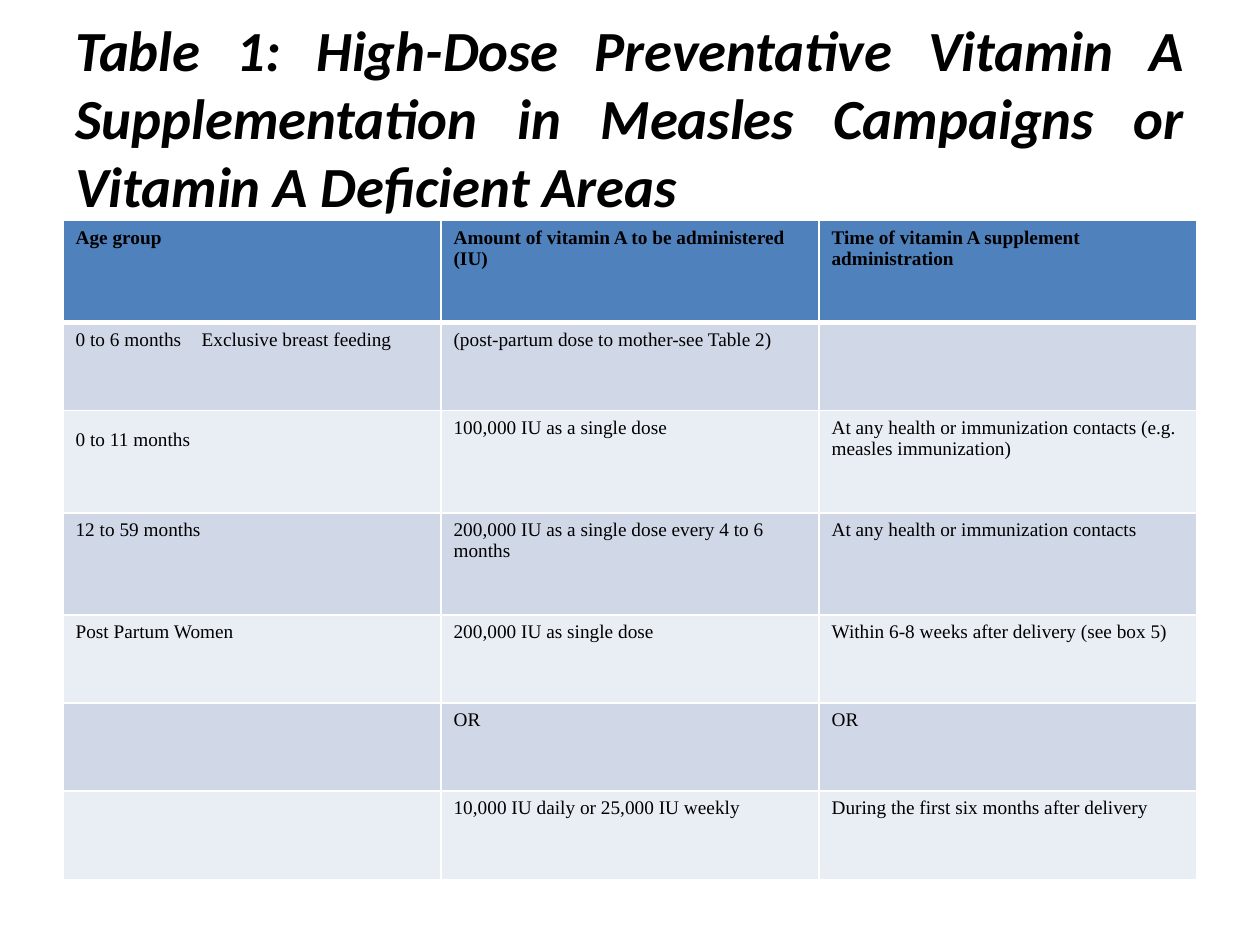
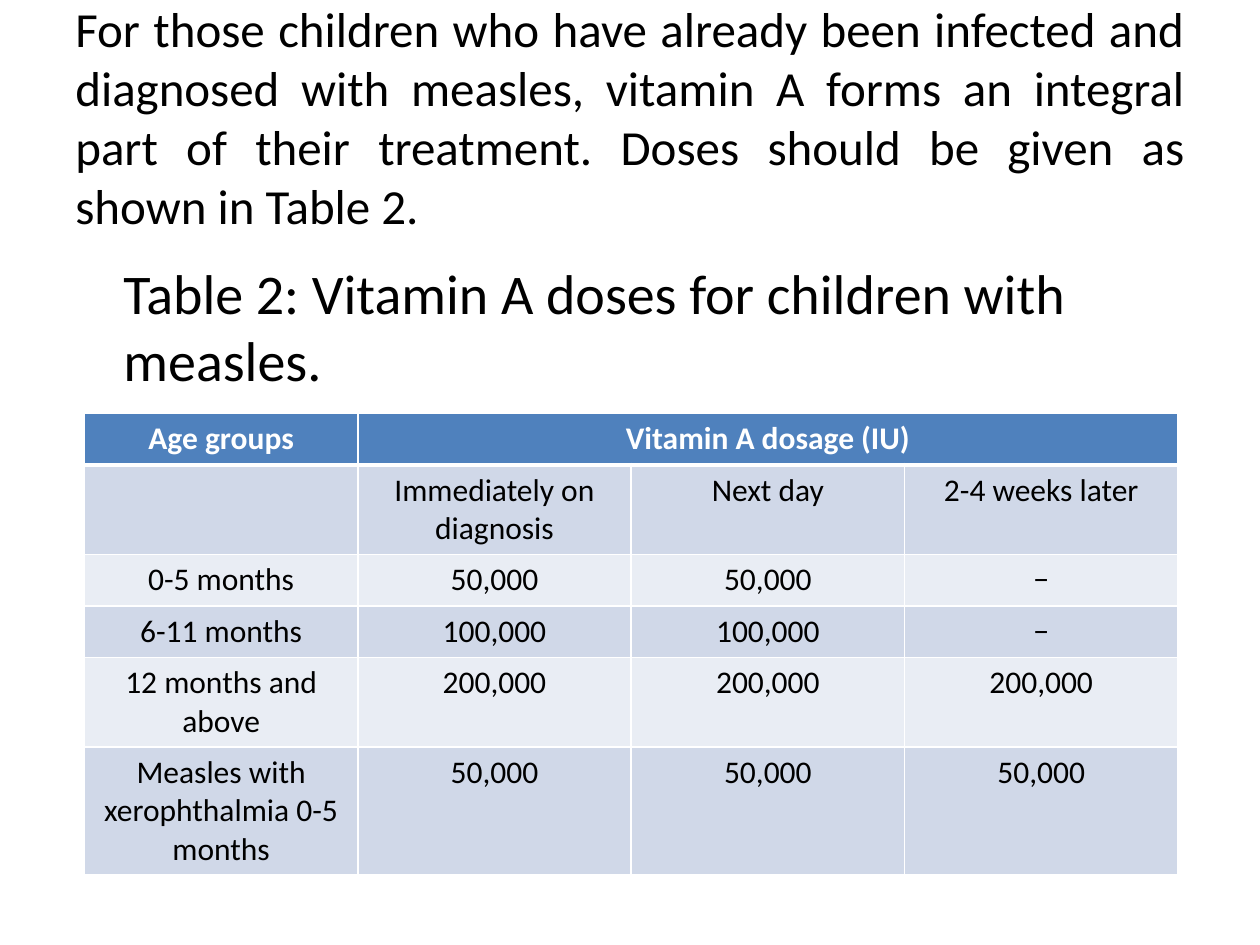
from dataclasses import dataclass

from lxml import etree
from pptx import Presentation
from pptx.dml.color import RGBColor
from pptx.enum.text import MSO_ANCHOR, PP_ALIGN
from pptx.oxml.ns import qn
from pptx.slide import Slide
from pptx.table import Table, _Cell
from pptx.text.text import _Paragraph
from pptx.util import Emu, Pt

LEFT, CENTER, JUSTIFY = PP_ALIGN.LEFT, PP_ALIGN.CENTER, PP_ALIGN.JUSTIFY
TOP, MIDDLE = MSO_ANCHOR.TOP, MSO_ANCHOR.MIDDLE

PX = 9144  # 100 px to the inch
BLACK, WHITE = "000000", "FFFFFF"
HEAD = "4F81BD"
BANDS = ("E9EDF4", "D0D8E8")
SANS, SERIF = "Calibri", "Times New Roman"
THIN, THICK = 1, 3


@dataclass
class Box:
    left: int
    top: int
    width: int
    height: int


@dataclass
class Style:
    size: float
    face: str = SANS
    color: str = BLACK
    bold: bool = False
    italic: bool = False
    align: PP_ALIGN = LEFT


@dataclass
class Grid:
    left: int
    top: int
    width: int
    rows: list[int]
    cells: list[list[str]]
    head: Style
    body: Style


TITLE = Box(50, 30, 900, 125)

DOSES = Grid(
    50, 175, 300, [81, 70, 81, 81, 70, 70, 70],
    [
        ["Age group", "Amount of vitamin A to be administered (IU)",
         "Time of vitamin A supplement administration"],
        ["0 to 6 months \tExclusive breast feeding",
         "(post-partum dose to mother-see Table 2)", ""],
        ["0 to 11 months", "100,000 IU as a single dose",
         "At any health or immunization contacts (e.g. measles immunization)"],
        ["12 to 59 months", "200,000 IU as a single dose every 4 to 6 months",
         "At any health or immunization contacts"],
        ["Post Partum Women", "200,000 IU as single dose",
         "Within 6-8 weeks after delivery (see box 5)"],
        ["", "OR", "OR"],
        ["", "10,000 IU daily or 25,000 IU weekly",
         "During the first six months after delivery"],
    ],
    Style(11, SERIF, bold=True), Style(11, SERIF),
)

CARE = Grid(
    67, 328, 217, [41, 71, 41, 41, 71, 101],
    [
        ["Age groups", "Vitamin A dosage (IU)", "", ""],
        ["", "Immediately on diagnosis", "Next day", "2-4 weeks later"],
        ["0-5 months", "50,000", "50,000", "−"],
        ["6-11 months", "100,000", "100,000", "−"],
        ["12 months and above", "200,000", "200,000", "200,000"],
        ["Measles with xerophthalmia 0-5 months", "50,000", "50,000", "50,000"],
    ],
    Style(18, color=WHITE, bold=True, align=CENTER), Style(18, align=CENTER),
)


def px(count: int) -> Emu:
    return Emu(count * PX)


def rgb(code: str) -> RGBColor:
    return RGBColor.from_string(code)


def write(para: _Paragraph, text: str, style: Style) -> None:
    para.text = text
    para.alignment = style.align
    font = para.font
    font.name, font.size = style.face, Pt(style.size)
    font.bold, font.italic = style.bold, style.italic
    font.color.rgb = rgb(style.color)


def add_text(slide: Slide, box: Box, text: str, style: Style,
             anchor: MSO_ANCHOR = MIDDLE, indent: int = 0) -> None:
    shape = slide.shapes.add_textbox(
        px(box.left), px(box.top), px(box.width), px(box.height))
    frame = shape.text_frame
    frame.word_wrap = True
    frame.vertical_anchor = anchor
    frame.margin_left = px(10 + indent)
    write(frame.paragraphs[0], text, style)


def add_edges(cell: _Cell, top: int, bottom: int) -> None:
    """Rule the four sides of a cell in white, with widths in points."""
    props = cell._tc.get_or_add_tcPr()
    for side, width in zip("LRTB", (THIN, THIN, top, bottom)):
        line = etree.SubElement(props, qn(f"a:ln{side}"), w=str(Pt(width)))
        fill = etree.SubElement(line, qn("a:solidFill"))
        etree.SubElement(fill, qn("a:srgbClr"), val=WHITE)


def add_grid(slide: Slide, grid: Grid) -> Table:
    count = len(grid.cells[0])
    table = slide.shapes.add_table(
        len(grid.rows), count, px(grid.left), px(grid.top),
        px(grid.width * count), px(sum(grid.rows))).table
    for col in table.columns:
        col.width = px(grid.width)
    for i, (high, texts) in enumerate(zip(grid.rows, grid.cells)):
        table.rows[i].height = px(high)
        for j, text in enumerate(texts):
            cell = table.cell(i, j)
            add_edges(cell, THICK if i == 1 else THIN, THIN if i else THICK)
            cell.fill.solid()
            cell.fill.fore_color.rgb = rgb(BANDS[i % 2] if i else HEAD)
            if text:
                write(cell.text_frame.paragraphs[0], text,
                      grid.body if i else grid.head)
    return table


def main() -> None:
    deck = Presentation()
    deck.slide_width, deck.slide_height = px(1000), px(750)
    blank = deck.slide_layouts[6]

    first = deck.slides.add_slide(blank)
    add_text(first, TITLE,
             "Table 1: High-Dose Preventative Vitamin A Supplementation in "
             "Measles Campaigns or Vitamin A Deficient Areas",
             Style(32.4, bold=True, italic=True, align=JUSTIFY))
    doses = add_grid(first, DOSES)
    doses.cell(2, 0).margin_top = px(15)

    second = deck.slides.add_slide(blank)
    add_text(second, TITLE,
             "For those children who have already been infected and diagnosed "
             "with measles, vitamin A forms an integral part of their "
             "treatment. Doses should be given as shown in Table 2.",
             Style(28, align=JUSTIFY))
    add_text(second, Box(50, 200, 900, 470),
             "Table 2: Vitamin A doses for children with measles.",
             Style(32), TOP, 38)
    care = add_grid(second, CARE)
    care.cell(0, 1).merge(care.cell(0, 3))

    deck.save("out.pptx")


if __name__ == "__main__":
    main()
